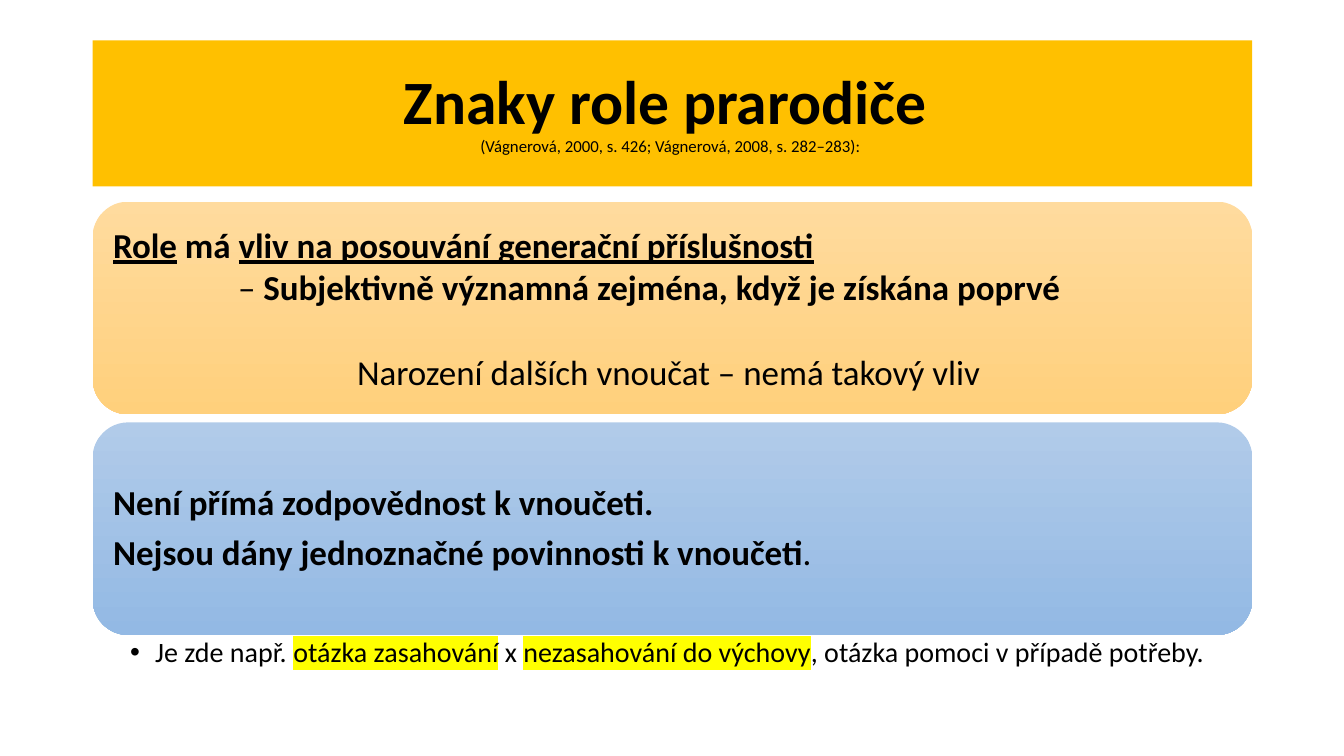
from dataclasses import dataclass
from lxml import etree
from pptx import Presentation
from pptx.dml.color import RGBColor
from pptx.enum.shapes import MSO_SHAPE as Preset
from pptx.enum.text import MSO_ANCHOR as Anchor, PP_ALIGN as Align
from pptx.oxml.ns import qn
from pptx.util import Inches, Pt


@dataclass(frozen=True)
class Theme:
    font: str = "Calibri"
    text: str = "000000"
    title_fill: str = "FFC000"
    orange: tuple = ("FFDB9E", "FFD07C")
    blue: tuple = ("B1CBE9", "93B9E4")
    marker: str = "FFFF00"
    title_size: int = 44
    source_size: int = 12
    panel_size: int = 25
    bullet_size: int = 20


theme = Theme()
LEFT, WIDTH = 0.92, 11.5
PANEL_TOP, PANEL_HEIGHT, PANEL_STEP = 2, 2.11, 2.19


def add_run(paragraph, text, size, style=""):
    run = paragraph.add_run()
    run.text = text
    font = run.font
    font.name = theme.font
    font.size = Pt(size)
    font.color.rgb = RGBColor.from_string(theme.text)
    font.bold = "b" in style
    font.underline = "u" in style
    if "h" in style:
        highlight = etree.Element(qn("a:highlight"))
        etree.SubElement(highlight, qn("a:srgbClr"), val=theme.marker)
        run._r.rPr.find(qn("a:solidFill")).addnext(highlight)


def add_block(preset, top, height):
    shape = slide.shapes.add_shape(
        preset, Inches(LEFT), Inches(top), Inches(WIDTH), Inches(height)
    )
    shape.shadow.inherit = False
    shape.line.fill.background()
    shape.text_frame.word_wrap = True
    shape.text_frame.vertical_anchor = Anchor.MIDDLE
    return shape


presentation = Presentation()
presentation.slide_width = Inches(13.33)
presentation.slide_height = Inches(7.5)
slide = presentation.slides.add_slide(presentation.slide_layouts[6])

title = add_block(Preset.RECTANGLE, 0.4, 1.45)
title.fill.solid()
title.fill.fore_color.rgb = RGBColor.from_string(theme.title_fill)
paragraph = title.text_frame.paragraphs[0]
paragraph.alignment = Align.CENTER
paragraph.line_spacing = 0.9
add_run(paragraph, "Znaky role prarodiče ", theme.title_size, "b")
paragraph.add_line_break()
add_run(paragraph, "(Vágnerová, 2000, s. 426; Vágnerová, 2008, s. 282–283): ", theme.source_size)

influence = [
    (Align.LEFT, 0, 0, [
        ("Role", "bu"), (" má ", "b"),
        ("vliv na posouvání generační příslušnosti", "bu"), (" ", ""),
    ]),
    (Align.LEFT, 1.24, 0, [
        ("– ", ""), ("Subjektivně významná zejména, když je získána poprvé", "b"),
    ]),
    (Align.CENTER, 0, 30.5, [("Narození dalších vnoučat – nemá takový vliv ", "")]),
]
duties = [
    (Align.JUSTIFY, 0, 0, [("Není přímá zodpovědnost k vnoučeti.", "b")]),
    (Align.JUSTIFY, 0, 0, [
        ("Nejsou dány jednoznačné povinnosti k vnoučeti", "b"), (". ", ""),
    ]),
]
panels = [(theme.orange, influence, 1, 0), (theme.blue, duties, 0.9, 8.75)]

for index, (colors, lines, line_spacing, space_after) in enumerate(panels):
    panel = add_block(Preset.ROUNDED_RECTANGLE, PANEL_TOP + index * PANEL_STEP, PANEL_HEIGHT)
    panel.fill.gradient()
    panel.fill.gradient_angle = 270
    for stop, position, color in zip(panel.fill.gradient_stops, (0, 1), colors):
        stop.position = position
        stop.color.rgb = RGBColor.from_string(color)
    frame = panel.text_frame
    frame.margin_left = frame.margin_right = Inches(0.1)
    frame.margin_top = frame.margin_bottom = Inches(0.1)
    for number, (alignment, indent, space_before, runs) in enumerate(lines):
        paragraph = frame.add_paragraph() if number else frame.paragraphs[0]
        paragraph.alignment = alignment
        paragraph.line_spacing = line_spacing
        paragraph.space_before = Pt(space_before)
        paragraph.space_after = Pt(space_after)
        paragraph._p.get_or_add_pPr().set("marL", str(Inches(indent)))
        for text, style in runs:
            add_run(paragraph, text, theme.panel_size, style)

note = slide.shapes.add_textbox(Inches(LEFT), Inches(6.3), Inches(WIDTH), Inches(0.45))
frame = note.text_frame
frame.word_wrap = True
frame.margin_left, frame.margin_right = Inches(0.37), Inches(0.19)
frame.margin_top = frame.margin_bottom = Inches(0.03)
paragraph = frame.paragraphs[0]
paragraph.alignment = Align.JUSTIFY
paragraph.line_spacing = 0.9
paragraph.space_after = Pt(4)
properties = paragraph._p.get_or_add_pPr()
properties.set("marL", str(Inches(0.25)))
properties.set("indent", str(Inches(-0.25)))
etree.SubElement(properties, qn("a:buFont"), typeface="Arial")
etree.SubElement(properties, qn("a:buChar"), char="•")
for text, style in [
    ("Je zde např. ", ""),
    ("otázka zasahování", "h"),
    (" x ", ""),
    ("nezasahování do výchovy", "h"),
    (", otázka pomoci v případě potřeby.", ""),
]:
    add_run(paragraph, text, theme.bullet_size, style)

presentation.save("out.pptx")
